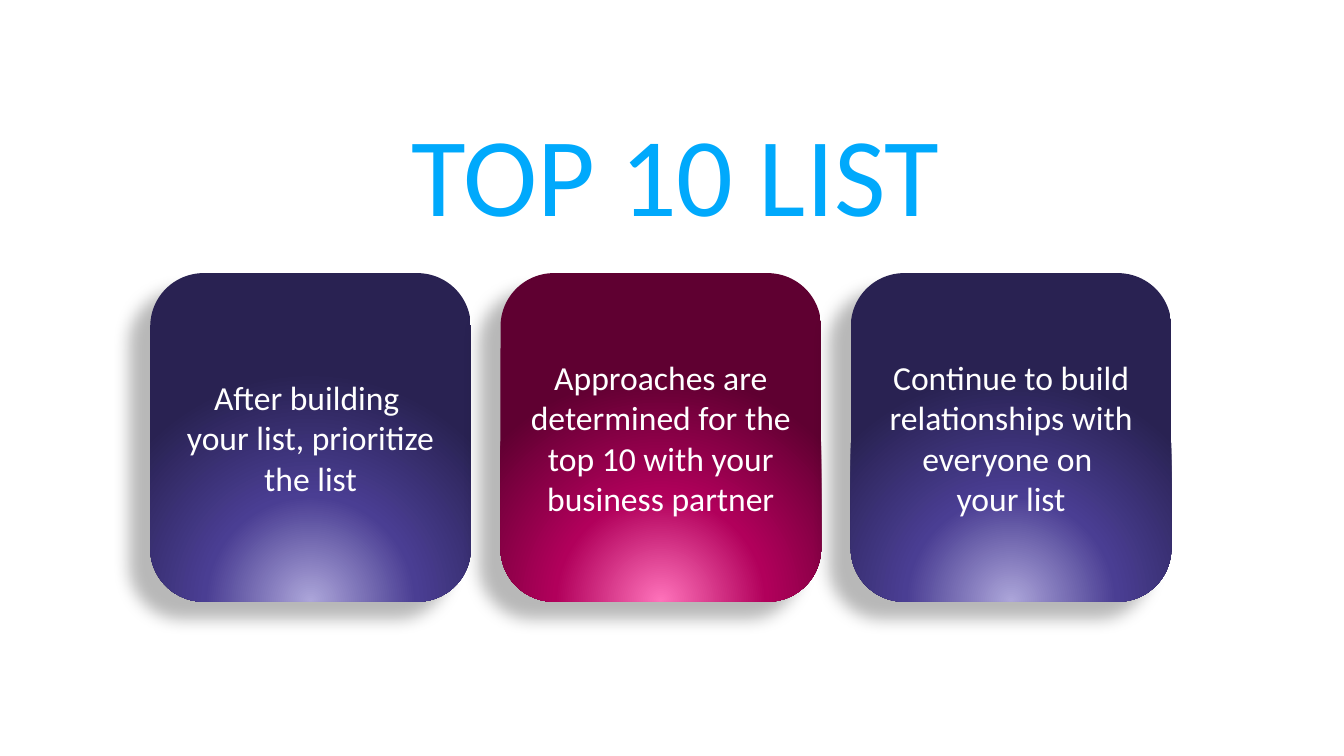
from lxml import etree
from pptx import Presentation
from pptx.dml.color import RGBColor
from pptx.enum.shapes import MSO_SHAPE as Shape
from pptx.enum.text import MSO_ANCHOR as Anchor, MSO_AUTO_SIZE as AutoSize, PP_ALIGN as Align
from pptx.oxml.ns import nsdecls
from pptx.util import Pt

FONT = "Calibri"
SKY, WHITE = "00A9FC", "FFFFFF"
PURPLE = ("ADA6DA", "4A3E93", "292252")
MAGENTA = ("FF73BB", "B1005B", "5F0031")
GLOW_STOPS = (0, 46000, 100000)

CARD_LEFT, CARD_TOP, CARD_STEP = 107.3, 195.1, 250.2
CARD_WIDTH, CARD_HEIGHT = 229, 234.7
CARDS = [
    ("After building \vyour list, prioritize the list", PURPLE),
    ("Approaches are determined for the top 10 with your business partner", MAGENTA),
    ("Continue to build relationships with everyone on \vyour list", PURPLE),
]


def color(hex_code):
    return RGBColor.from_string(hex_code)


def drawing_xml(tag, attributes, content):
    return etree.fromstring(f"<a:{tag} {nsdecls('a')} {attributes}>{content}</a:{tag}>")


def format_text(paragraph, size, hex_code):
    paragraph.alignment = Align.CENTER
    for run in paragraph.runs:
        run.font.name = FONT
        run.font.size = Pt(size)
        run.font.color.rgb = color(hex_code)


def add_glow(card, shades):
    """Radial gradient that shines from the bottom edge."""
    stops = "".join(
        f'<a:gs pos="{pos}"><a:srgbClr val="{color(shade)}"/></a:gs>'
        for pos, shade in zip(GLOW_STOPS, shades))
    center = '<a:fillToRect l="50000" t="130000" r="50000" b="-30000"/>'
    gradient = drawing_xml(
        "gradFill", 'rotWithShape="1"',
        f'<a:gsLst>{stops}</a:gsLst><a:path path="circle">{center}</a:path>')
    card.element.spPr.insert(2, gradient)


def add_soft_shadow(card):
    card.shadow.inherit = False
    effects = card.element.spPr.find(".//{*}effectLst")
    effects.append(drawing_xml(
        "outerShdw",
        f'blurRad="{Pt(11.8)}" dist="{Pt(19.7)}" dir="{141 * 60000}" rotWithShape="0"',
        '<a:srgbClr val="000000"><a:alpha val="28000"/></a:srgbClr>'))


def add_card(slide, left, message, shades):
    card = slide.shapes.add_shape(
        Shape.ROUNDED_RECTANGLE, Pt(left), Pt(CARD_TOP), Pt(CARD_WIDTH), Pt(CARD_HEIGHT))
    card.line.fill.background()
    add_glow(card, shades)
    add_soft_shadow(card)
    frame = card.text_frame
    frame.word_wrap = True
    frame.vertical_anchor = Anchor.MIDDLE
    frame.text = message
    format_text(frame.paragraphs[0], 24, WHITE)


def set_title(slide, wording):
    title = slide.shapes.title
    title.left, title.top, title.width, title.height = map(Pt, (283.7, 42.5, 398.2, 133.2))
    frame = title.text_frame
    frame.text = wording
    frame.word_wrap = False
    frame.auto_size = AutoSize.SHAPE_TO_FIT_TEXT
    frame.vertical_anchor = Anchor.TOP
    heading = frame.paragraphs[0]
    heading.line_spacing = 1.3
    heading.space_before = Pt(0)
    format_text(heading, 80, SKY)
    # Thin outline around the letters
    outline = drawing_xml(
        "ln", f'w="{Pt(0.25)}"',
        f'<a:solidFill><a:srgbClr val="{color(SKY)}"/></a:solidFill>')
    heading.runs[0].font._element.insert(0, outline)


def main():
    deck = Presentation()
    deck.slide_width, deck.slide_height = Pt(960), Pt(540)
    slide = deck.slides.add_slide(deck.slide_layouts[5])
    set_title(slide, "TOP 10 LIST")

    # Row of advice cards
    for position, (message, shades) in enumerate(CARDS):
        add_card(slide, CARD_LEFT + position * CARD_STEP, message, shades)

    deck.save("out.pptx")


if __name__ == "__main__":
    main()
